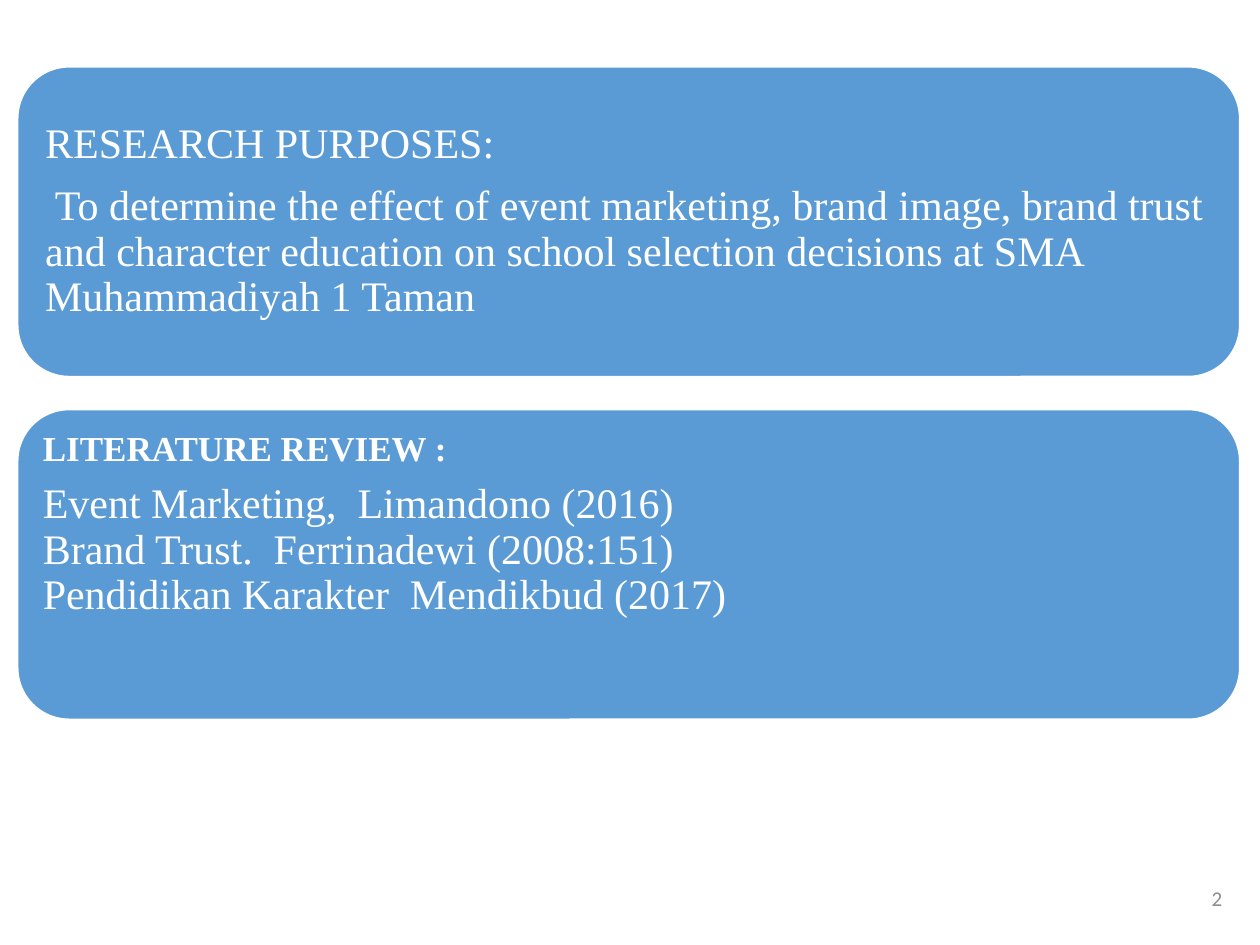
"""Build a slide with two stacked cards: research purposes and literature review."""
from pptx import Presentation
from pptx.dml.color import RGBColor
from pptx.enum.shapes import MSO_SHAPE as Shape
from pptx.enum.text import MSO_ANCHOR as Anchor, PP_ALIGN as Align
from pptx.util import Inches, Pt

BLUE = RGBColor(0x5B, 0x9B, 0xD5)
WHITE = RGBColor(0xFF, 0xFF, 0xFF)
GREY = RGBColor(0x8C, 0x8C, 0x8C)
SERIF, SANS = "Times New Roman", "Calibri"

CARDS = [
    {"anchor": Anchor.MIDDLE, "side": 0.1, "top": 0.1, "lines": [
        ("RESEARCH PURPOSES:", 24, False, 9.5),
        (" To determine the effect of event marketing, brand image, brand trust "
         "and character education on school selection decisions at SMA "
         "Muhammadiyah 1 Taman", 24, False, 0)]},
    {"anchor": Anchor.TOP, "side": 0.08, "top": 0.05, "lines": [
        ("LITERATURE REVIEW :", 20, True, 8),
        ("Event Marketing,  Limandono (2016)", 24, False, 0),
        ("Brand Trust.  Ferrinadewi (2008:151)", 24, False, 0),
        ("Pendidikan Karakter  Mendikbud (2017)", 24, False, 0)]},
]
NUMBER = "2"
LEFT, TOP, WIDE, HIGH, PITCH = 0.14, 0.53, 9.7, 2.46, 2.72


def style(para, size, face, color, bold=False):
    for run in para.runs:
        font = run.font
        font.size, font.name, font.bold = Pt(size), face, bold
        font.color.rgb = color


def add_card(slide, row, card):
    box = slide.shapes.add_shape(
        Shape.ROUNDED_RECTANGLE, Inches(LEFT), Inches(TOP + row * PITCH),
        Inches(WIDE), Inches(HIGH))
    box.shadow.inherit = False
    box.fill.solid()
    box.fill.fore_color.rgb = BLUE
    box.line.color.rgb = WHITE
    box.line.width = Pt(1)
    frame = box.text_frame
    frame.word_wrap = True
    frame.vertical_anchor = card["anchor"]
    frame.margin_left = frame.margin_right = Inches(card["side"])
    frame.margin_top = frame.margin_bottom = Inches(card["top"])
    frame.text = "\n".join(line[0] for line in card["lines"])
    for para, (_, size, bold, after) in zip(frame.paragraphs, card["lines"]):
        para.alignment = Align.LEFT
        para.line_spacing = 0.9
        para.space_after = Pt(after)
        style(para, size, SERIF, WHITE, bold)


def add_number(slide):
    box = slide.shapes.add_textbox(
        Inches(9.37), Inches(6.93), Inches(0.43), Inches(0.4))
    frame = box.text_frame
    frame.word_wrap = True
    frame.vertical_anchor = Anchor.MIDDLE
    frame.text = NUMBER
    para = frame.paragraphs[0]
    para.alignment = Align.RIGHT
    style(para, 12, SANS, GREY)


def main():
    deck = Presentation()
    deck.slide_width, deck.slide_height = Inches(10), Inches(7.5)
    slide = deck.slides.add_slide(deck.slide_layouts[6])
    for row, card in enumerate(CARDS):
        add_card(slide, row, card)
    add_number(slide)
    deck.save("out.pptx")


if __name__ == "__main__":
    main()
